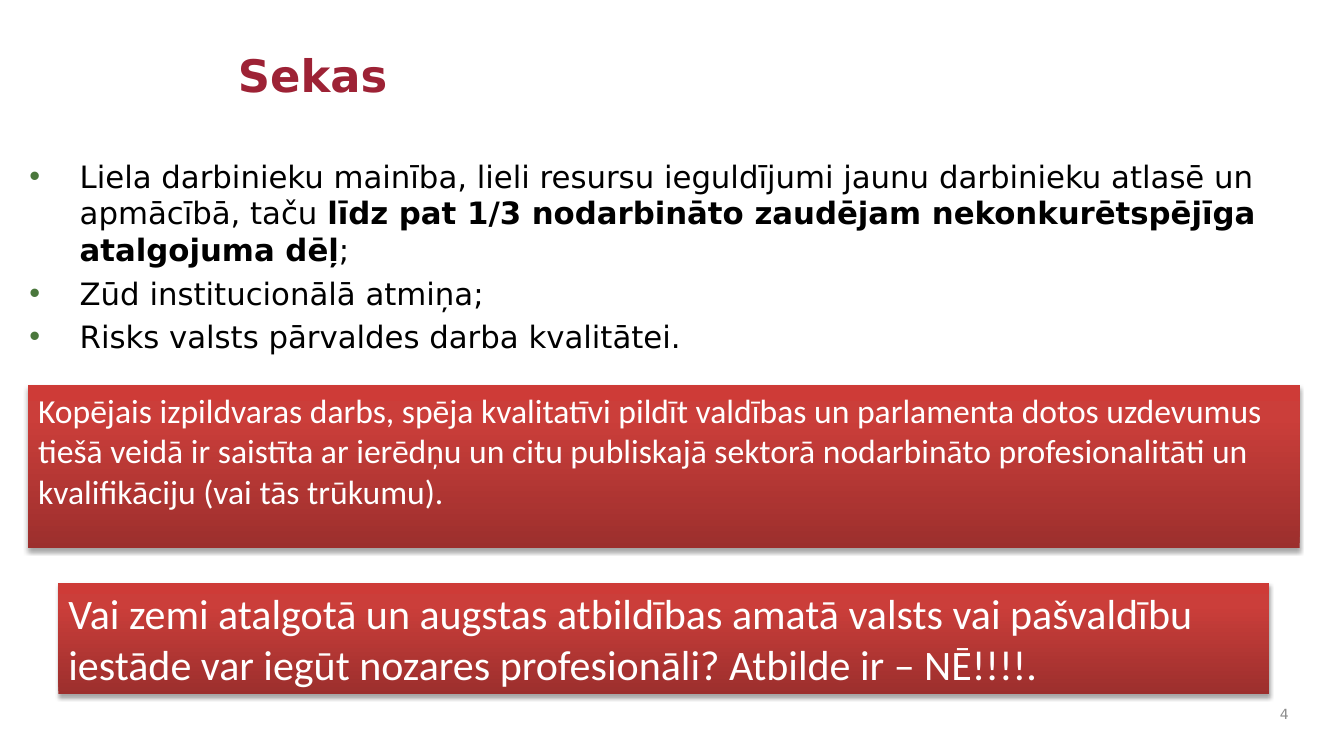
from lxml.etree import SubElement
from pptx import Presentation
from pptx.dml.color import RGBColor
from pptx.enum.shapes import MSO_SHAPE
from pptx.enum.text import MSO_ANCHOR, MSO_AUTO_SIZE, PP_ALIGN
from pptx.oxml import parse_xml
from pptx.oxml.ns import nsdecls, qn
from pptx.util import Inches, Pt

COLORS = {"title": "9D2235", "text": "000000", "bullet": "4A773C", "number": "8C8C8C",
          "callout": "FFFFFF", "dark": "9C2F2D", "mid": "CB3E3A", "light": "CE3B37"}

deck = Presentation()
deck.slide_width, deck.slide_height = Inches(13.33), Inches(7.5)
page = deck.slides.add_slide(deck.slide_layouts[1])


def area(left, top, width, height):
    """Turn percentages of the slide's size into lengths."""
    across, down = deck.slide_width / 100, deck.slide_height / 100
    return int(left * across), int(top * down), int(width * across), int(height * down)


def add_span(para, text, size, color, font="DejaVu Sans", bold=False):
    span = para.add_run()
    span.text = text
    span.font.size, span.font.name, span.font.bold = Pt(size), font, bold
    span.font.color.rgb = RGBColor.from_string(COLORS[color])


# Title and list placeholders
title, body = page.shapes.title, page.placeholders[1]
for holder, place in ((title, area(16.95, 5.6, 78.02, 15.07)),
                      (body, area(1.43, 20.13, 95.27, 32.4))):
    holder.left, holder.top, holder.width, holder.height = place
    holder.text_frame.auto_size = MSO_AUTO_SIZE.NONE
    holder.text_frame.vertical_anchor = MSO_ANCHOR.TOP

title_para = title.text_frame.paragraphs[0]
title_para.alignment = PP_ALIGN.LEFT
add_span(title_para, "Sekas", 32, "title", bold=True)

# Bulleted consequences: each one is a list of (text, bold)
consequences = [
    [("Liela darbinieku mainība, lieli resursu ieguldījumi jaunu darbinieku atlasē un apmācībā, taču ", False),
     ("līdz pat 1/3 nodarbināto zaudējam nekonkurētspējīga atalgojuma dēļ", True),
     (";", False)],
    [("Zūd institucionālā atmiņa;", False)],
    [("Risks valsts pārvaldes darba kvalitātei.", False)],
]
for index, parts in enumerate(consequences):
    para = body.text_frame.add_paragraph() if index else body.text_frame.paragraphs[0]
    para.space_before = Pt(4.4)
    properties = para._p.get_or_add_pPr()
    properties.set("marL", str(Inches(0.5)))
    properties.set("indent", str(Inches(-0.5)))
    bullet_color = SubElement(properties, qn("a:buClr"))
    SubElement(bullet_color, qn("a:srgbClr"), val=COLORS["bullet"])
    SubElement(properties, qn("a:buFont"), typeface="Arial")
    SubElement(properties, qn("a:buChar"), char="•")
    for text, bold in parts:
        add_span(para, text, 22, "text", bold=bold)

# Slide number
number = page.shapes.add_textbox(*area(93.32, 92.27, 3.3, 4.4))
number.text_frame.word_wrap = True
number.text_frame.vertical_anchor = MSO_ANCHOR.MIDDLE
number_para = number.text_frame.paragraphs[0]
number_para.alignment = PP_ALIGN.RIGHT
add_span(number_para, "4", 10, "number")

# Red callouts with a gradient and a soft shadow
stops = "".join(f'<a:gs pos="{share * 1000}"><a:srgbClr val="{COLORS[name]}"/></a:gs>'
                for share, name in ((0, "dark"), (80, "mid"), (100, "light")))
gradient = (f'<a:gradFill {nsdecls("a")} rotWithShape="1"><a:gsLst>{stops}</a:gsLst>'
            '<a:lin ang="16200000" scaled="0"/></a:gradFill>')
shadow = (f'<a:outerShdw {nsdecls("a")} blurRad="{Pt(3.1)}" dist="{Pt(1.8)}" dir="5400000" rotWithShape="0">'
          '<a:srgbClr val="000000"><a:alpha val="35000"/></a:srgbClr></a:outerShdw>')
left, width, inset = 2.1, 94.6, 2.25
callouts = [
    (area(left, 50.93, width, 21.6), 24,
     "Kopējais izpildvaras darbs, spēja kvalitatīvi pildīt valdības un parlamenta dotos uzdevumus "
     "tiešā veidā ir saistīta ar ierēdņu un citu publiskajā sektorā nodarbināto profesionalitāti "
     "un kvalifikāciju (vai tās trūkumu)."),
    (area(left + inset, 77.07, width - 2 * inset, 14.8), 30,
     "Vai zemi atalgotā un augstas atbildības amatā valsts vai pašvaldību iestāde var iegūt "
     "nozares profesionāli? Atbilde ir – NĒ!!!!."),
]
for place, size, text in callouts:
    box = page.shapes.add_shape(MSO_SHAPE.RECTANGLE, *place)
    box.line.fill.background()
    box.shadow.inherit = False
    box._element.spPr.find(qn("a:ln")).addprevious(parse_xml(gradient))
    box._element.spPr.find(qn("a:effectLst")).append(parse_xml(shadow))
    frame = box.text_frame
    frame.word_wrap = True
    frame.vertical_anchor = MSO_ANCHOR.TOP
    frame.paragraphs[0].alignment = PP_ALIGN.LEFT
    add_span(frame.paragraphs[0], text, size, "callout", font="Calibri")

deck.save("out.pptx")
